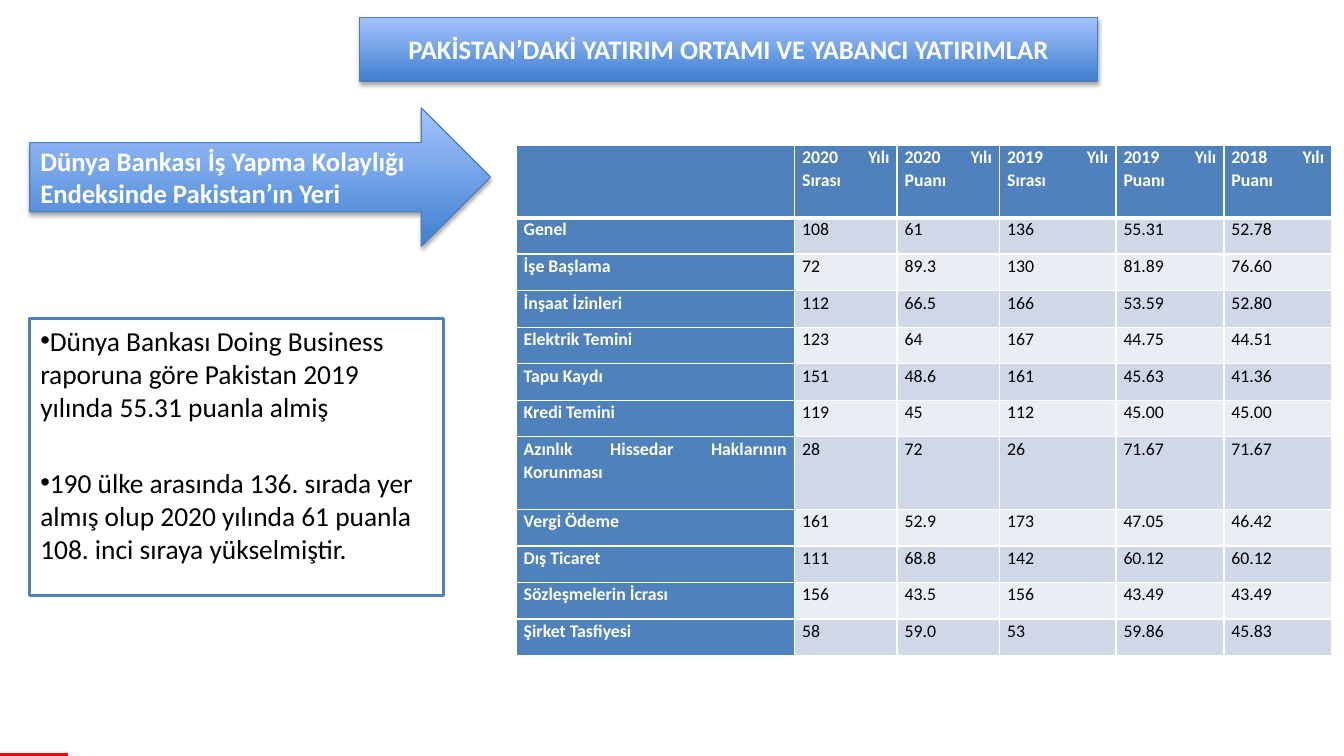
from lxml import etree
from pptx import Presentation
from pptx.dml.color import RGBColor
from pptx.enum.shapes import MSO_CONNECTOR, MSO_SHAPE
from pptx.enum.text import MSO_ANCHOR, PP_ALIGN
from pptx.oxml.ns import qn
from pptx.util import Cm, Pt

TITLE = "PAKİSTAN’DAKİ YATIRIM ORTAMI VE YABANCI YATIRIMLAR"
ARROW = "Dünya Bankası İş Yapma Kolaylığı Endeksinde Pakistan’ın Yeri"
NOTES = [
    "Dünya Bankası Doing Business raporuna göre Pakistan 2019 yılında 55.31 puanla almiş",
    "190 ülke arasında 136. sırada yer almış olup 2020 yılında 61 puanla 108. inci sıraya yükselmiştir.",
]
ROWS = [
    ("", "2020 Yılı Sırası", "2020 Yılı Puanı", "2019 Yılı Sırası", "2019 Yılı Puanı", "2018 Yılı Puanı"),
    ("Genel", "108", "61", "136", "55.31", "52.78"),
    ("İşe Başlama", "72", "89.3", "130", "81.89", "76.60"),
    ("İnşaat İzinleri", "112", "66.5", "166", "53.59", "52.80"),
    ("Elektrik Temini", "123", "64", "167", "44.75", "44.51"),
    ("Tapu Kaydı", "151", "48.6", "161", "45.63", "41.36"),
    ("Kredi Temini", "119", "45", "112", "45.00", "45.00"),
    ("Azınlık Hissedar Haklarının Korunması", "28", "72", "26", "71.67", "71.67"),
    ("Vergi Ödeme", "161", "52.9", "173", "47.05", "46.42"),
    ("Dış Ticaret", "111", "68.8", "142", "60.12", "60.12"),
    ("Sözleşmelerin İcrası", "156", "43.5", "156", "43.49", "43.49"),
    ("Şirket Tasfiyesi", "58", "59.0", "53", "59.86", "45.83"),
]
WIDTHS = [6.63, 2.44, 2.44, 2.77, 2.57, 2.57]
LOW, TALL = 0.87, 1.73
TALL_ROWS = (0, 7)
BLUE, WHITE, BLACK = "4F81BD", "FFFFFF", "000000"
BANDS = ["E9EDF4", "D0D8E8"]


def paint(target, code):
    target.rgb = RGBColor.from_string(code)


def add(parent, tag, **attrs):
    node = etree.SubElement(parent, qn(tag))
    for key, value in attrs.items():
        node.set(key, str(value))
    return node


def write(para, text, size, code, bold=False):
    run = para.add_run()
    run.text = text
    run.font.name = "Calibri"
    run.font.size = Pt(size)
    run.font.bold = bold
    paint(run.font.color, code)


def stroke(item, code, width):
    paint(item.line.fill.fore_color if item.line.fill.solid() else item.line.color, code)
    item.line.width = Pt(width)


def shade(item, dist, alpha):
    props = item._element.spPr
    for old in props.findall(qn("a:effectLst")):
        props.remove(old)
    glow = add(add(props, "a:effectLst"), "a:outerShdw", blurRad=Pt(3.1), dist=Pt(dist),
               dir=5400000, rotWithShape=0)
    add(add(glow, "a:srgbClr", val=BLACK), "a:alpha", val=alpha * 1000)


def banner(slide, kind, box, text, align):
    item = slide.shapes.add_shape(kind, *map(Cm, box))
    item.fill.gradient()
    item.fill.gradient_angle = 90
    for stop, code in zip(item.fill.gradient_stops, ["3F80CE", "A4C4FF"]):
        paint(stop.color, code)
    for stop, place in zip(item.fill.gradient_stops, [0, 1]):
        stop.position = place
    stroke(item, "4B7EBC", 0.75)
    shade(item, 1.8, 35)
    frame = item.text_frame
    frame.word_wrap = True
    frame.vertical_anchor = MSO_ANCHOR.MIDDLE
    para = frame.paragraphs[0]
    para.alignment = align
    write(para, text, 18, WHITE, True)


def footer(slide):
    rule = slide.shapes.add_connector(MSO_CONNECTOR.STRAIGHT, Cm(0), Cm(17.96), Cm(1.63), Cm(17.96))
    stroke(rule, "FF0000", 2)
    shade(rule, 1.6, 38)


def notes(slide):
    item = slide.shapes.add_shape(MSO_SHAPE.RECTANGLE, Cm(0.71), Cm(7.59), Cm(9.86), Cm(6.58))
    item.shadow.inherit = False
    item.fill.solid()
    paint(item.fill.fore_color, WHITE)
    stroke(item, BLUE, 2)
    frame = item.text_frame
    frame.word_wrap = True
    frame.vertical_anchor = MSO_ANCHOR.TOP
    for i, text in enumerate(NOTES):
        para = frame.add_paragraph() if i else frame.paragraphs[0]
        para.alignment = PP_ALIGN.LEFT
        if i:
            para.space_before = Pt(29)
        props = para._p.get_or_add_pPr()
        add(props, "a:buFont", typeface="Arial")
        add(props, "a:buChar", char="•")
        write(para, text, 18.5, BLACK)


def border(cell, head):
    props = cell._tc.get_or_add_tcPr()
    for side in "LRTB":
        width = 3 if head and side == "B" else 1
        edge = add(props, "a:ln" + side, w=Pt(width))
        add(add(edge, "a:solidFill"), "a:srgbClr", val=WHITE)


def scores(slide):
    high = [TALL if r in TALL_ROWS else LOW for r in range(len(ROWS))]
    table = slide.shapes.add_table(len(ROWS), len(WIDTHS), Cm(12.29), Cm(3.45),
                                   Cm(sum(WIDTHS)), Cm(sum(high))).table
    for col, width in zip(table.columns, WIDTHS):
        col.width = Cm(width)
    for r, row in enumerate(ROWS):
        table.rows[r].height = Cm(high[r])
        for c, text in enumerate(row):
            cell = table.cell(r, c)
            head = r == 0 or c == 0
            border(cell, r == 0)
            cell.fill.solid()
            paint(cell.fill.fore_color, BLUE if head else BANDS[r % 2])
            cell.margin_left = cell.margin_right = Cm(0.18)
            cell.margin_top = cell.margin_bottom = 0
            if text:
                para = cell.text_frame.paragraphs[0]
                para.alignment = PP_ALIGN.JUSTIFY
                para.line_spacing = 1.07
                para.space_after = Pt(5)
                write(para, text, 12, WHITE if head else BLACK, head)


def main():
    deck = Presentation()
    deck.slide_width, deck.slide_height = Cm(32), Cm(18)
    slide = deck.slides.add_slide(deck.slide_layouts[6])
    footer(slide)
    notes(slide)
    scores(slide)
    banner(slide, MSO_SHAPE.RECTANGLE, (8.56, 0.41, 17.58, 1.52), TITLE, PP_ALIGN.CENTER)
    banner(slide, MSO_SHAPE.RIGHT_ARROW, (0.71, 2.57, 10.97, 3.3), ARROW, PP_ALIGN.LEFT)
    deck.save("out.pptx")


if __name__ == "__main__":
    main()
